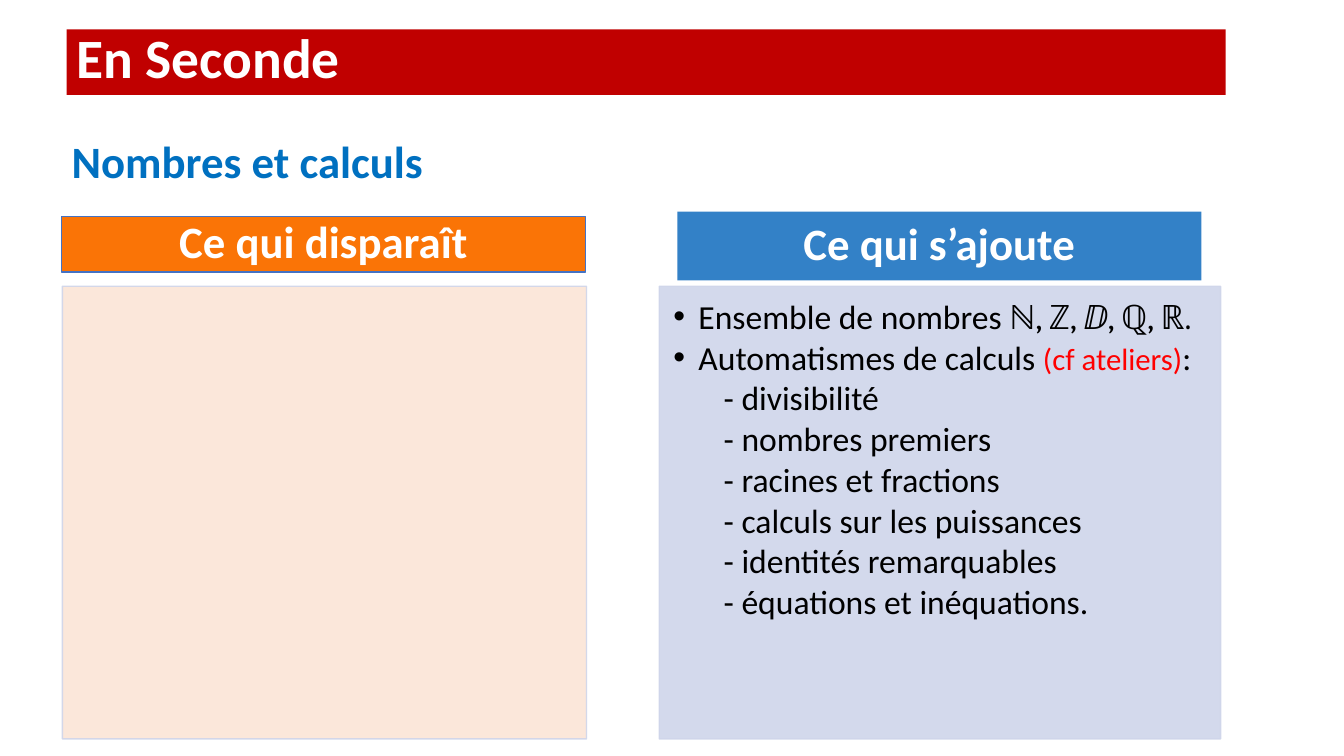
from lxml.etree import SubElement
from pptx import Presentation
from pptx.dml.color import RGBColor
from pptx.enum.shapes import MSO_SHAPE as Shape
from pptx.enum.text import MSO_ANCHOR as Anchor, MSO_AUTO_SIZE as AutoSize, PP_ALIGN as Align
from pptx.oxml.ns import qn
from pptx.util import Pt


def paint(shape, fill, line=None, opacity=100):
    """Fill and outline a shape with hex colours."""
    shape.fill.solid()
    shape.fill.fore_color.rgb = RGBColor.from_string(fill)
    if line:
        shape.line.color.rgb = RGBColor.from_string(line)
        shape.line.width = Pt(1)
    else:
        shape.line.fill.background()
    if opacity < 100:
        for color in shape._element.spPr.iter(qn("a:srgbClr")):
            SubElement(color, qn("a:alpha"), val=str(opacity * 1000))


def write(paragraph, text, size=24, color="000000", bold=False, font="Calibri",
          align=Align.LEFT, spacing=0.9, before=0, after=0, margin=0, bullet=None):
    """Add a run to a paragraph and set the paragraph's format."""
    run = paragraph.add_run()
    run.text = text
    run.font.name, run.font.size, run.font.bold = font, Pt(size), bold
    run.font.color.rgb = RGBColor.from_string(color)
    paragraph.alignment, paragraph.line_spacing = align, spacing
    paragraph.space_before, paragraph.space_after = Pt(before), Pt(after)
    properties = paragraph._p.get_or_add_pPr()
    properties.set("marL", str(Pt(margin)))
    properties.set("indent", str(Pt(-margin if bullet else 0)))
    for old in properties.findall(qn("a:buChar")) + properties.findall(qn("a:buNone")):
        properties.remove(old)
    if bullet:
        SubElement(properties, qn("a:buChar"), char=bullet)
    else:
        SubElement(properties, qn("a:buNone"))


presentation = Presentation()
presentation.slide_width, presentation.slide_height = Pt(960), Pt(540)
slide = presentation.slides.add_slide(presentation.slide_layouts[3])
title, section, added = slide.placeholders

# Place the placeholders
for shape, box, anchor in (
    (title, (47.5, 21, 828, 46.8), Anchor.MIDDLE),
    (section, (43.9, 91.4, 828, 46.8), Anchor.BOTTOM),
    (added, (470.9, 204.5, 401, 323.3), Anchor.TOP),
):
    shape.left, shape.top, shape.width, shape.height = map(Pt, box)
    frame = shape.text_frame
    frame.auto_size, frame.word_wrap, frame.vertical_anchor = AutoSize.NONE, True, anchor

# Title band and section heading
paint(title, "C00000")
write(title.text_frame.paragraphs[0], "En Seconde", size=39.6, color="FFFFFF",
      bold=True, spacing=0.8)
write(section.text_frame.paragraphs[0], "Nombres et calculs", size=32, color="0070C0",
      bold=True, before=10)

# Column headers and the empty left panel
for text, box, fill, line, opacity in (
    ("Ce qui disparaît", (43.9, 154.8, 374.4, 39.6), "FA7406", "4472C4", 100),
    ("Ce qui s’ajoute", (483.8, 151.2, 374.4, 49), "3381C7", None, 100),
    ("", (44.6, 204.5, 374.4, 323.3), "FBE5D6", "CFD5EA", 90),
):
    shape = slide.shapes.add_shape(Shape.RECTANGLE, *map(Pt, box))
    shape.shadow.inherit = False
    paint(shape, fill, line, opacity)
    if text:
        frame = shape.text_frame
        frame.vertical_anchor = Anchor.MIDDLE
        frame.margin_top = frame.margin_bottom = 0
        write(frame.paragraphs[0], text, size=32, color="FFFFFF", bold=True,
              align=Align.CENTER)

# Right panel: added topics
paint(added, "CFD5EA", "CFD5EA", 90)
frame = added.text_frame
frame.margin_left, frame.margin_top = Pt(10), Pt(10)
frame.margin_right, frame.margin_bottom = Pt(13.5), Pt(15)

topic = {"margin": 18, "bullet": "•", "after": 3.2}
paragraph = frame.paragraphs[0]
write(paragraph, "Ensemble de nombres ", **topic)
write(paragraph, "ℕ, ℤ, ⅅ, ℚ, ℝ.", font="Cambria", **topic)

paragraph = frame.add_paragraph()
write(paragraph, "Automatismes de calculs ", **topic)
write(paragraph, "(cf ateliers)", size=22, color="FF0000", **topic)
write(paragraph, ":", **topic)

for skill in ("divisibilité", "nombres premiers", "racines et fractions",
              "calculs sur les puissances", "identités remarquables",
              "équations et inéquations."):
    write(frame.add_paragraph(), f"- {skill}", margin=36, after=3.2)

presentation.save("out.pptx")
